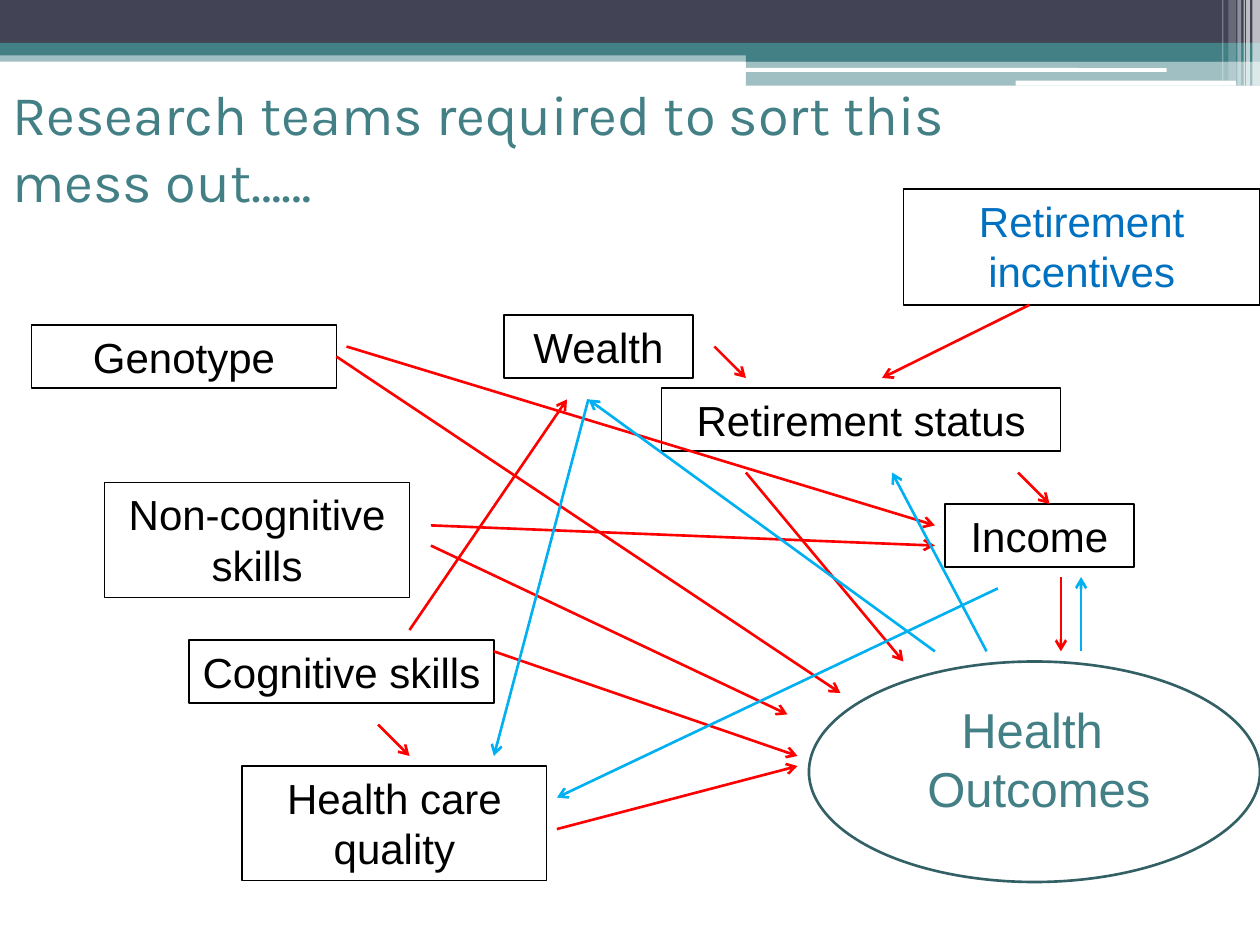
"""Build the slide on the web of causes behind health outcomes."""
from dataclasses import dataclass

from lxml import etree
from pptx import Presentation
from pptx.dml.color import RGBColor
from pptx.enum.shapes import MSO_CONNECTOR, MSO_SHAPE
from pptx.enum.text import MSO_ANCHOR, PP_ALIGN
from pptx.oxml.ns import qn
from pptx.util import Inches, Pt

RECT, ROUND, OVAL = MSO_SHAPE.RECTANGLE, MSO_SHAPE.ROUNDED_RECTANGLE, MSO_SHAPE.OVAL
STRAIGHT = MSO_CONNECTOR.STRAIGHT
TOP, MIDDLE = MSO_ANCHOR.TOP, MSO_ANCHOR.MIDDLE
LEFT, CENTER = PP_ALIGN.LEFT, PP_ALIGN.CENTER
RIGHT_SIDE = 3

COLORS = {
    "teal": "438086",
    "dark_teal": "326065",
    "slate": "424456",
    "white": "FFFFFF",
    "black": "000000",
    "blue": "0070C0",
    "cause": "FF0000",
    "feedback": "00B0F0",
}


@dataclass
class Band:
    left: float
    top: float
    width: float
    height: float
    color: str
    alpha: int = 100
    kind: int = RECT


@dataclass
class Factor:
    text: str
    left: float
    top: float
    width: float
    height: float = 0.5
    color: str = "black"


@dataclass
class Arrow:
    x1: float
    y1: float
    x2: float
    y2: float
    color: str = "cause"
    source: str = ""


BANDS = [
    Band(0, 0.4, 10, 0.09, "teal", 50),
    Band(0, 0, 10, 0.34, "slate"),
    Band(0, 0.34, 10, 0.1, "teal"),
    Band(5.92, 0.39, 4.08, 0.1, "teal"),
    Band(5.92, 0.48, 4.08, 0.2, "teal", 50),
    Band(5.91, 0.54, 3.35, 0.03, "white", kind=ROUND),
    Band(8.06, 0.64, 1.75, 0.04, "white", kind=ROUND),
    Band(9.94, 0, 0.06, 0.68, "white", 65),
    Band(9.89, 0, 0.03, 0.68, "white", 65),
    Band(9.87, 0, 0.01, 0.68, "white", 60),
    Band(9.82, 0, 0.03, 0.68, "white", 40),
    Band(9.75, 0, 0.06, 0.64, "white", 20),
    Band(9.7, 0, 0.01, 0.64, "white", 30),
]

FACTORS = [
    Factor("Income", 7.5, 4, 1.5),
    Factor("Non-cognitive skills", 0.83, 3.83, 2.42, 0.91),
    Factor("Wealth", 4, 2.5, 1.5),
    Factor("Retirement status", 5.25, 3.08, 3.17),
    Factor("Cognitive skills", 1.5, 5.08, 2.42),
    Factor("Genotype", 0.25, 2.58, 2.42),
    Factor("Health care quality", 1.92, 6.08, 2.42, 0.91),
    Factor("Retirement incentives", 7.17, 1.5, 2.83, 0.92, "blue"),
]

ARROWS = [
    Arrow(8.17, 2.42, 7, 3),
    Arrow(5.92, 3.75, 7.17, 5.25),
    Arrow(3.42, 4.33, 6.25, 5.67),
    Arrow(2.67, 2.83, 6.67, 5.5, source="Genotype"),
    Arrow(8.08, 3.75, 8.33, 4),
    Arrow(3.25, 5, 4.5, 3.17),
    Arrow(8.42, 4.58, 8.42, 5.17),
    Arrow(3.92, 5.17, 6.33, 6),
    Arrow(3.42, 4.17, 7.42, 4.33),
    Arrow(2.75, 2.75, 7.42, 4.17),
    Arrow(7.83, 5.17, 7.08, 3.75, "feedback"),
    Arrow(8.58, 5.17, 8.58, 4.58, "feedback"),
    Arrow(7.42, 5.17, 4.67, 3.17, "feedback"),
    Arrow(4.42, 6.58, 6.33, 6.08),
    Arrow(7.92, 4.67, 4.42, 6.33, "feedback"),
    Arrow(5.67, 2.75, 5.92, 3),
    Arrow(4.67, 3.17, 3.92, 6, "feedback"),
    Arrow(3, 5.75, 3.25, 6),
]


def rgb(name: str) -> RGBColor:
    """Look up a named colour."""
    return RGBColor.from_string(COLORS[name])


def write(sp, text: str, *, size: int = 24, color: str = "black", font: str = "Arial",
          align=CENTER, anchor=TOP, wrap: bool = True) -> None:
    """Fill a shape with formatted text, one paragraph per line."""
    tf = sp.text_frame
    tf.word_wrap = wrap
    tf.vertical_anchor = anchor
    tf.text = text
    for p in tf.paragraphs:
        p.alignment = align
        for r in p.runs:
            r.font.size = Pt(size)
            r.font.name = font
            r.font.color.rgb = rgb(color)


def add_band(s, band: Band) -> None:
    """Draw one piece of the header decoration."""
    sp = s.shapes.add_shape(band.kind, Inches(band.left), Inches(band.top),
                            Inches(band.width), Inches(band.height))
    sp.shadow.inherit = False
    sp.line.fill.background()
    sp.fill.solid()
    sp.fill.fore_color.rgb = rgb(band.color)
    if band.alpha < 100:
        clr = sp.fill._xPr.find(qn("a:solidFill"))[0]
        etree.SubElement(clr, qn("a:alpha"), val=str(band.alpha * 1000))


def add_outline(s, kind, left: float, top: float, width: float, height: float,
                color: str, weight: float):
    """Draw an unfilled outlined shape."""
    sp = s.shapes.add_shape(kind, Inches(left), Inches(top), Inches(width), Inches(height))
    sp.shadow.inherit = False
    sp.fill.background()
    sp.line.color.rgb = rgb(color)
    sp.line.width = Pt(weight)
    return sp


def add_factor(s, factor: Factor):
    """Draw a labelled factor box."""
    sp = add_outline(s, RECT, factor.left, factor.top, factor.width, factor.height, "black", 0.75)
    write(sp, factor.text, color=factor.color)
    return sp


def add_arrow(s, arrow: Arrow, boxes: dict) -> None:
    """Draw an arrow, joined to its source box if it has one."""
    cx = s.shapes.add_connector(STRAIGHT, Inches(arrow.x1), Inches(arrow.y1),
                                Inches(arrow.x2), Inches(arrow.y2))
    if arrow.source:
        cx.begin_connect(boxes[arrow.source], RIGHT_SIDE)
    cx.line.color.rgb = rgb(arrow.color)
    cx.line.width = Pt(1.5)
    etree.SubElement(cx.line._get_or_add_ln(), qn("a:tailEnd"), type="arrow")
    etree.SubElement(cx._element.spPr, qn("a:effectLst"))


def main() -> None:
    """Build and save the slide."""
    prs = Presentation()
    prs.slide_width, prs.slide_height = Inches(10), Inches(7.5)
    s = prs.slides.add_slide(prs.slide_layouts[6])
    for band in BANDS:
        add_band(s, band)
    title = s.shapes.add_textbox(Inches(0), Inches(0.58), Inches(9), Inches(1.17))
    write(title, "Research teams required to sort this \vmess out……", size=32, color="teal",
          font="Karla", align=LEFT, anchor=MIDDLE)
    boxes = {factor.text: add_factor(s, factor) for factor in FACTORS}
    outcome = s.shapes.add_textbox(Inches(7.25), Inches(5.5), Inches(1.99), Inches(1.35))
    write(outcome, "Health \nOutcomes", size=28, color="teal", wrap=False)
    add_outline(s, OVAL, 6.42, 5.25, 3.58, 1.75, "dark_teal", 1.5)
    for arrow in ARROWS:
        add_arrow(s, arrow, boxes)
    prs.save("out.pptx")


if __name__ == "__main__":
    main()
